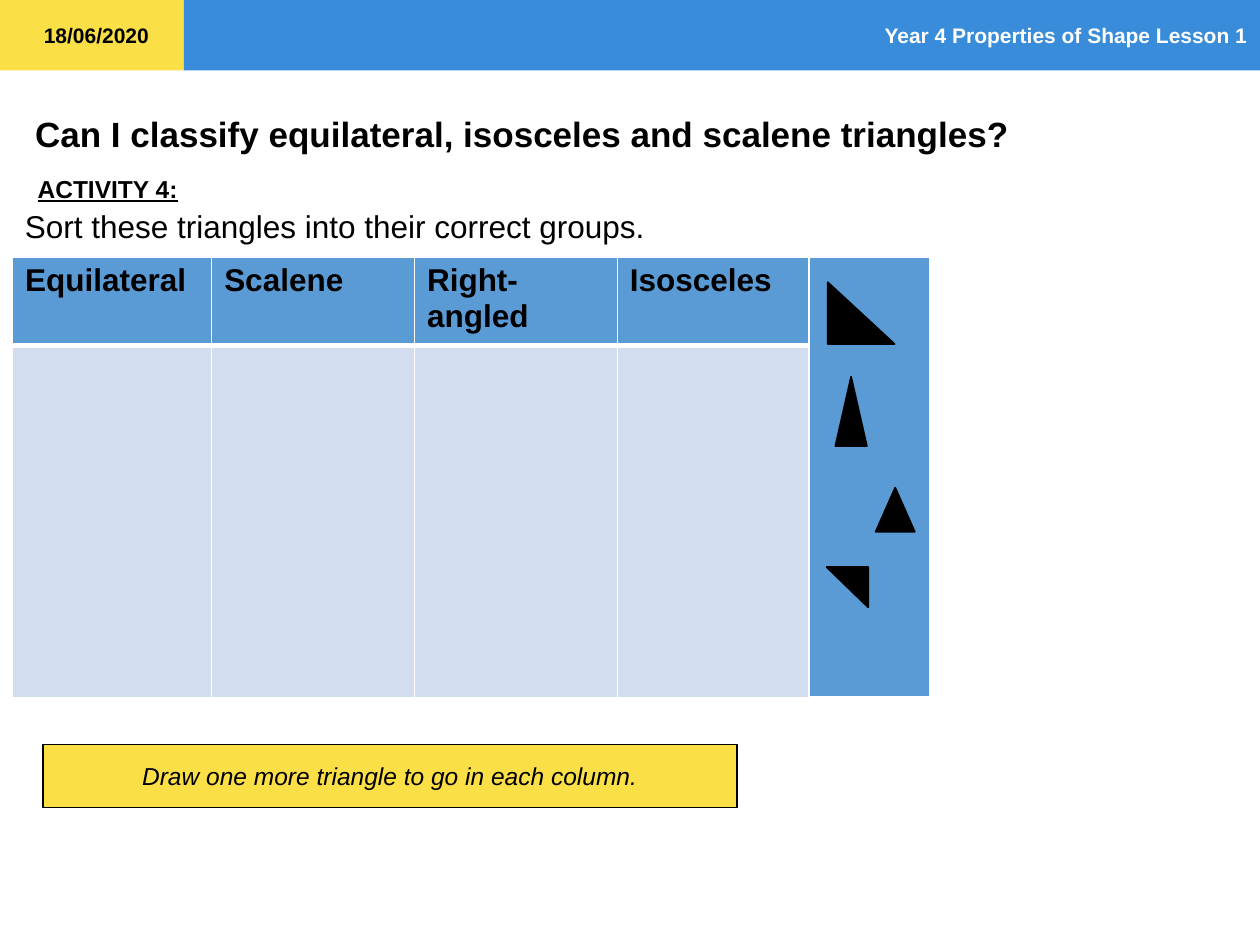
from dataclasses import dataclass, field

from lxml import etree
from pptx import Presentation, util as u
from pptx.dml.color import RGBColor
from pptx.enum import shapes, text
from pptx.oxml.ns import qn

COLUMNS, ROWS = 100, 75


@dataclass(frozen=True)
class Theme:
    font: str = "Arial"
    black: str = "000000"
    white: str = "FFFFFF"
    yellow: str = "FADF47"
    banner: str = "388CDA"
    header: str = "5B9BD5"
    body: str = "D2DEEF"
    small: int = 12
    medium: int = 14
    large: int = 18
    title: int = 20


THEME = Theme()


@dataclass(frozen=True)
class Area:
    left: float
    top: float
    width: float
    height: float


@dataclass(frozen=True)
class Label:
    words: str
    size: int
    color: str = THEME.black
    align: text.PP_ALIGN = text.PP_ALIGN.LEFT
    style: dict = field(default_factory=dict)


@dataclass(frozen=True)
class Triangle:
    area: Area
    kind: shapes.MSO_SHAPE
    turn: int = 0


deck = Presentation()
deck.slide_width, deck.slide_height = u.Inches(10), u.Inches(7.5)
page = deck.slides.add_slide(deck.slide_layouts[6])


def across(columns: float) -> int:
    return round(deck.slide_width * columns / COLUMNS)


def down(rows: float) -> int:
    return round(deck.slide_height * rows / ROWS)


def place(area: Area) -> tuple[int, int, int, int]:
    return across(area.left), down(area.top), across(area.width), down(area.height)


def write(frame, label: Label) -> None:
    para = frame.paragraphs[0]
    para.alignment = label.align
    span = para.add_run()
    span.text = label.words
    span.font.color.rgb = RGBColor.from_string(label.color)
    values = {"name": THEME.font, "size": u.Pt(label.size), **label.style}
    for name, value in values.items():
        setattr(span.font, name, value)


def add_text(area: Area, label: Label, wrap: bool = True) -> None:
    frame = page.shapes.add_textbox(*place(area)).text_frame
    frame.word_wrap = wrap
    write(frame, label)


def add_box(area: Area, fill: str, kind=shapes.MSO_SHAPE.RECTANGLE,
            outlined: bool = False, label: Label | None = None, turn: int = 0) -> None:
    box = page.shapes.add_shape(kind, *place(area))
    box.shadow.inherit = False
    box.rotation = turn
    box.fill.solid()
    box.fill.fore_color.rgb = RGBColor.from_string(fill)
    if outlined:
        box.line.color.rgb = RGBColor.from_string(THEME.black)
        box.line.width = u.Pt(1)
    else:
        box.line.fill.background()
    if label:
        box.text_frame.vertical_anchor = text.MSO_ANCHOR.MIDDLE
        write(box.text_frame, label)


def style_cell(cell, fill: str, widths: dict[str, int]) -> None:
    properties = cell._tc.get_or_add_tcPr()
    for side, width in widths.items():
        line = etree.SubElement(properties, qn(f"a:ln{side}"), w=str(u.Pt(width)))
        solid = etree.SubElement(line, qn("a:solidFill"))
        etree.SubElement(solid, qn("a:srgbClr"), val=THEME.white)
    cell.fill.solid()
    cell.fill.fore_color.rgb = RGBColor.from_string(fill)


def add_sorting_table(area: Area, widths: list[float], heights: list[float],
                      headings: list[str]) -> None:
    table = page.shapes.add_table(len(heights), len(widths), *place(area)).table
    table.horz_banding = False
    for column, width in zip(table.columns, widths):
        column.width = across(width)
    for row, height in zip(table.rows, heights):
        row.height = down(height)
    looks = [
        (THEME.header, {"L": 1, "R": 1, "T": 1, "B": 3}),
        (THEME.body, {"L": 1, "R": 1, "T": 3, "B": 1}),
    ]
    for row, (fill, borders) in zip(table.rows, looks):
        for cell in row.cells:
            style_cell(cell, fill, borders)
    last = len(widths) - 1
    table.cell(0, last).merge(table.cell(1, last))
    for index, heading in enumerate(headings):
        write(table.cell(0, index).text_frame,
              Label(heading, THEME.large, style={"bold": True}))


TRIANGLES = [
    Triangle(Area(65.7, 22.4, 5.3, 4.9), shapes.MSO_SHAPE.RIGHT_TRIANGLE),
    Triangle(Area(66.3, 29.9, 2.5, 5.5), shapes.MSO_SHAPE.ISOSCELES_TRIANGLE),
    Triangle(Area(69.5, 38.7, 3.1, 3.5), shapes.MSO_SHAPE.ISOSCELES_TRIANGLE),
    Triangle(Area(65.6, 45, 3.3, 3.2), shapes.MSO_SHAPE.RIGHT_TRIANGLE, 180),
]


def main() -> None:
    bold = {"bold": True}
    date_width, banner_height = 14.6, 5.6
    add_box(Area(0, 0, date_width, banner_height), THEME.yellow)
    add_box(Area(date_width, 0, COLUMNS - date_width, banner_height), THEME.banner,
            label=Label("Year 4 Properties of Shape Lesson 1", THEME.small,
                        THEME.white, text.PP_ALIGN.RIGHT, bold))
    add_text(Area(1.8, 8.4, 93.5, 4.4),
             Label("Can I classify equilateral, isosceles and scalene triangles?",
                   THEME.title, style=bold))
    add_text(Area(2.5, 1.3, 10.4, 3),
             Label("18/06/2020", THEME.small, style=bold), wrap=False)
    add_text(Area(2, 13.3, 13.2, 3.4),
             Label("ACTIVITY 4:", THEME.medium, style={**bold, "underline": True}),
             wrap=False)
    add_text(Area(1, 15.9, 98, 13.1),
             Label("Sort these triangles into their correct groups.", THEME.large))
    add_box(Area(3.4, 59.1, 55.1, 5), THEME.yellow, outlined=True,
            label=Label("Draw one more triangle to go in each column.", THEME.medium,
                        align=text.PP_ALIGN.CENTER, style={"italic": True}))
    add_sorting_table(Area(1, 20.4, 72.8, 35), [15.8, 16.1, 16.1, 15.2, 9.6], [7, 28],
                      ["Equilateral", "Scalene", "Right-angled", "Isosceles"])
    for triangle in TRIANGLES:
        add_box(triangle.area, THEME.black, triangle.kind, outlined=True,
                turn=triangle.turn)
    deck.save("out.pptx")


if __name__ == "__main__":
    main()
